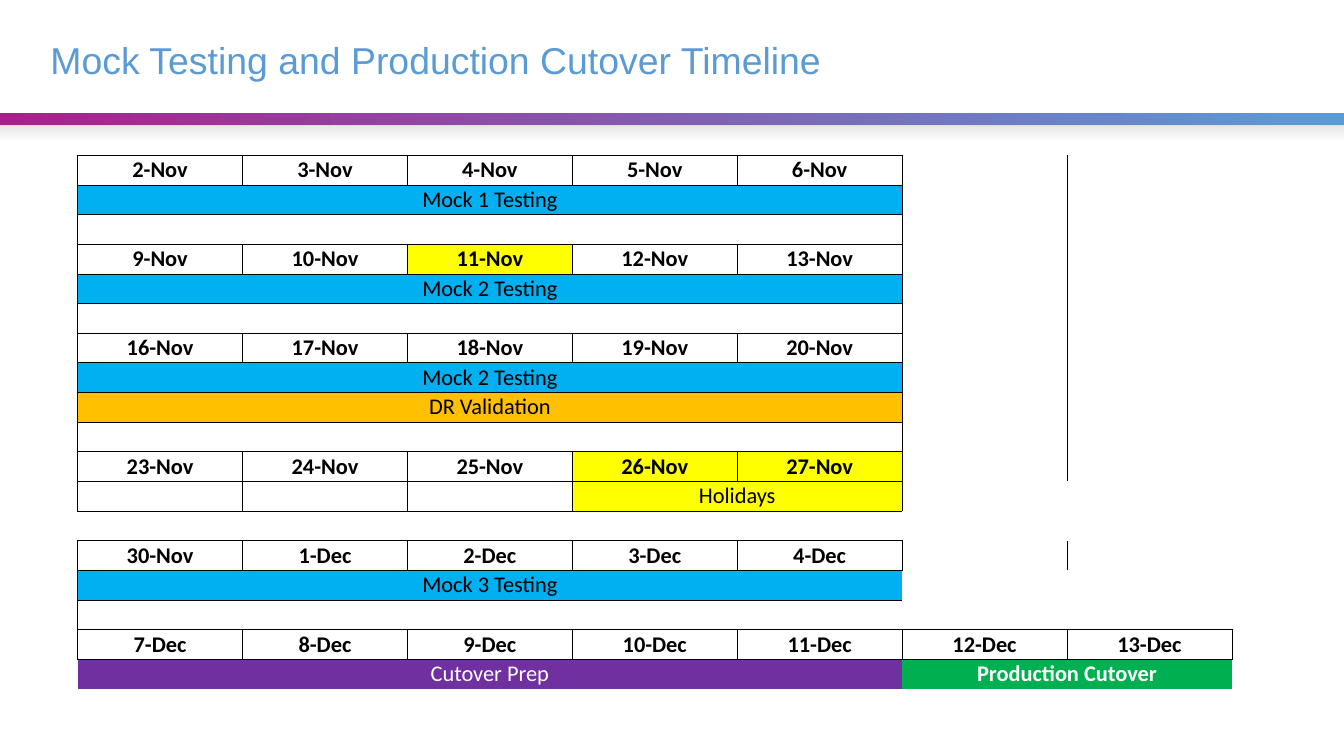
from collections import defaultdict, namedtuple

from lxml import etree
from pptx import Presentation
from pptx.dml.color import RGBColor
from pptx.enum.shapes import MSO_SHAPE
from pptx.enum.text import MSO_ANCHOR, PP_ALIGN
from pptx.oxml.ns import qn
from pptx.util import Inches, Pt

RECTANGLE = MSO_SHAPE.RECTANGLE
MIDDLE = MSO_ANCHOR.MIDDLE
LEFT, CENTER = PP_ALIGN.LEFT, PP_ALIGN.CENTER

BLUE, ORANGE, YELLOW = "00B0F0", "FFC000", "FFFF00"
PURPLE, GREEN = "7030A0", "00B050"
BLACK, WHITE, TITLE_BLUE = "000000", "FFFFFF", "5B9BD5"
NO_STYLE = "{2D5ABB26-0587-4C30-8999-92F81FD0307C}"

WORKDAYS, COLUMNS = 5, 7
NOVEMBER_DAYS = 30
HOLIDAYS = (11, 26, 27)

Bar = namedtuple("Bar", "text fill start span edges color bold",
                 defaults=("", None, 0, WORKDAYS, "LRTB", BLACK, False))
SPACER = Bar()
WEEKS = [
    (2, WORKDAYS, [[Bar("Mock 1 Testing", BLUE)], [SPACER]]),
    (9, WORKDAYS, [[Bar("Mock 2 Testing", BLUE)], [SPACER]]),
    (16, WORKDAYS, [[Bar("Mock 2 Testing", BLUE)],
                    [Bar("DR Validation", ORANGE)], [SPACER]]),
    (23, WORKDAYS, [[Bar(start=day, span=1) for day in range(3)]
                    + [Bar("Holidays", YELLOW, 3, 2)],
                    [Bar(edges="TB")]]),
    (30, WORKDAYS, [[Bar("Mock 3 Testing", BLUE, edges="LT")],
                    [Bar(edges="LB")]]),
    (37, COLUMNS, [[Bar("Cutover Prep", PURPLE, edges="T", color=WHITE),
                    Bar("Production Cutover", GREEN, WORKDAYS, 2, "T", WHITE, True)]]),
]


def rgb(value):
    return RGBColor.from_string(value)


def write_text(para, text, font="Calibri", size=16, color=BLACK, bold=False, align=LEFT):
    para.alignment = align
    span = para.add_run()
    span.text = text
    span.font.name = font
    span.font.size = Pt(size)
    span.font.bold = bold
    span.font.color.rgb = rgb(color)


def add_gradient_band(page, left, top, width, height, colors, angle):
    band = page.shapes.add_shape(
        RECTANGLE, Inches(left), Inches(top), Inches(width), Inches(height))
    band.shadow.inherit = False
    band.line.fill.background()
    band.fill.gradient()
    band.fill.gradient_angle = angle
    for stop, color in zip(band.fill.gradient_stops, colors):
        stop.color.rgb = rgb(color)
    return band


def add_header(page, left, top, width):
    box = page.shapes.add_textbox(
        Inches(left + 0.5), Inches(top + 0.25), Inches(width - 1), Inches(0.75))
    frame = box.text_frame
    frame.word_wrap = True
    frame.vertical_anchor = MIDDLE
    frame.margin_left = frame.margin_right = frame.margin_top = frame.margin_bottom = 0
    para = frame.paragraphs[0]
    para.line_spacing = Pt(26.7)
    write_text(para, "Mock Testing and Production Cutover Timeline",
               font="Arial", size=26.7, color=TITLE_BLUE)
    add_gradient_band(page, left, top + 1.12, width, 0.13, ("A8218B", TITLE_BLUE), 0)
    fade = add_gradient_band(page, left, top + 1.25, width, 0.13, ("E7E6E6", "E7E6E6"), 270)
    last_color = list(fade._element.iter(qn("a:srgbClr")))[-1]
    etree.SubElement(last_color, qn("a:alpha"), val="0")


def date_label(day):
    return f"{day}-Nov" if day <= NOVEMBER_DAYS else f"{day - NOVEMBER_DAYS}-Dec"


def schedule_rows():
    rows = []
    for first, days, bars in WEEKS:
        rows.append([
            Bar(date_label(first + offset), YELLOW if first + offset in HOLIDAYS else None,
                offset, 1, bold=True)
            for offset in range(days)])
        rows.extend(bars)
    return rows


def collect_edges(rows):
    edges = defaultdict(set)
    for row, bars in enumerate(rows):
        for bar in bars:
            end = bar.start + bar.span
            for column in range(bar.start, end):
                edges[row, column] |= set(bar.edges) & set("TB")
            edges[row, bar.start] |= set(bar.edges) & {"L"}
            if "R" in bar.edges:
                edges[row, end - 1].add("R")
                edges[row, end].add("L")
    return edges


def style_cell(cell, bar, sides):
    cell.margin_left = cell.margin_right = cell.margin_top = cell.margin_bottom = 0
    cell.vertical_anchor = MIDDLE
    properties = cell._tc.get_or_add_tcPr()
    for side in "LRTB":
        if side in sides:
            line = etree.SubElement(properties, qn(f"a:ln{side}"), w=str(Pt(0.5)))
            paint = etree.SubElement(line, qn("a:solidFill"))
            etree.SubElement(paint, qn("a:srgbClr"), val=BLACK)
    if bar.fill:
        cell.fill.solid()
        cell.fill.fore_color.rgb = rgb(bar.fill)
    else:
        cell.fill.background()
    para = cell.text_frame.paragraphs[0]
    if bar.text:
        write_text(para, bar.text, color=bar.color, bold=bar.bold, align=CENTER)
    else:
        etree.SubElement(para._p, qn("a:endParaRPr"), sz="1600")


def add_timeline(page, left, top, width, height):
    rows = schedule_rows()
    frame = page.shapes.add_table(
        len(rows), COLUMNS, Inches(left), Inches(top), Inches(width), Inches(height))
    table = frame.table
    table.first_row = table.horz_banding = False
    table._tbl.tblPr.find(qn("a:tableStyleId")).text = NO_STYLE
    for column in table.columns:
        column.width = Inches(width / COLUMNS)
    for row in table.rows:
        row.height = Inches(height / len(rows))

    edges = collect_edges(rows)
    for row, bars in enumerate(rows):
        starts = {bar.start: bar for bar in bars}
        for column in range(COLUMNS):
            style_cell(table.cell(row, column), starts.get(column, SPACER),
                       edges[row, column])
        for bar in bars:
            if bar.span > 1:
                table.cell(row, bar.start).merge(
                    table.cell(row, bar.start + bar.span - 1))


def main():
    deck = Presentation()
    deck.slide_width = Inches(13.33)
    deck.slide_height = Inches(7.5)
    page = deck.slides.add_slide(deck.slide_layouts[6])
    add_header(page, 0, 0, 13.33)
    add_timeline(page, 0.77, 1.54, 11.45, 5.3)
    deck.save("out.pptx")


if __name__ == "__main__":
    main()
